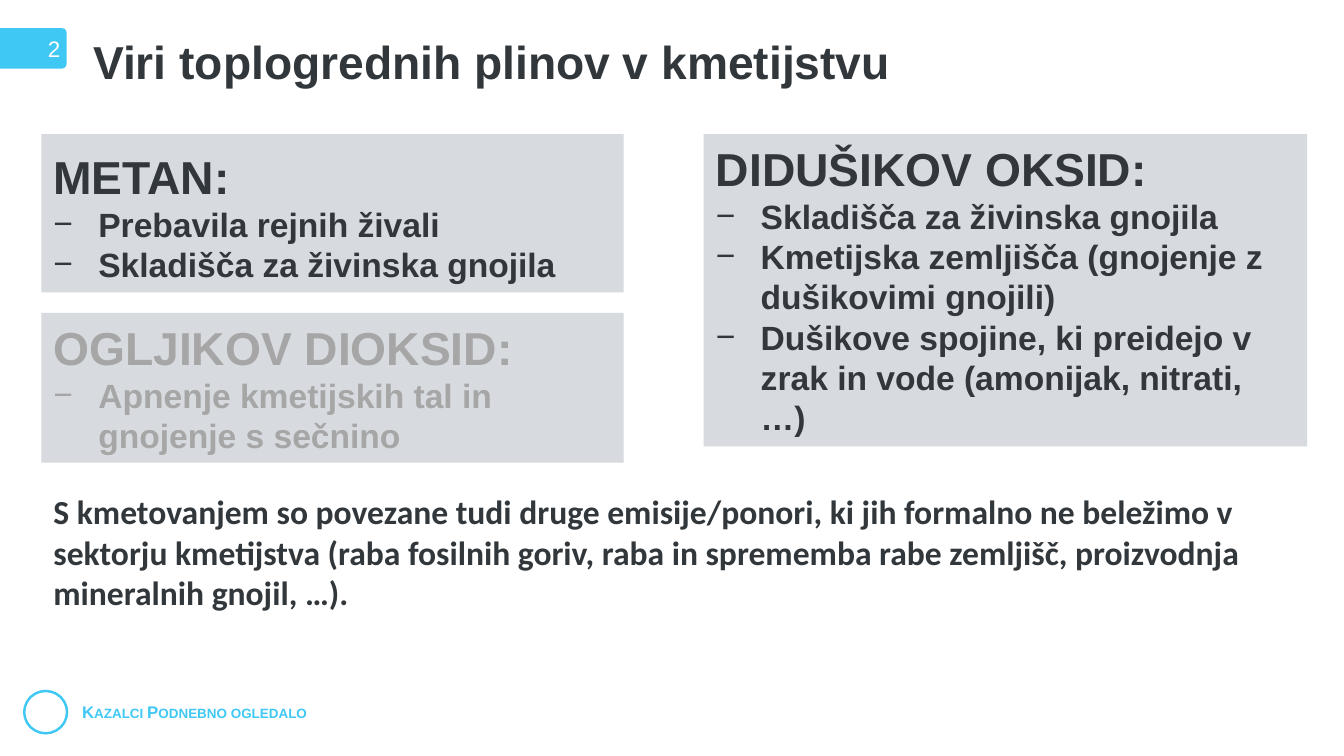
from pptx import Presentation
from pptx.dml.color import RGBColor
from pptx.enum.shapes import MSO_SHAPE as SHAPE
from pptx.enum.text import MSO_ANCHOR as ANCHOR, PP_ALIGN as ALIGN
from pptx.oxml.ns import qn
from pptx.util import Pt
from lxml.etree import SubElement

PX = 9144  # 100 px to the inch
DARK, GREY, BLUE, PALE = "31373B", "A6A6A6", "40C8F4", "D7DADF"
LEFT, TOP = 82, 266
INDENT = 89


def color(code):
    return RGBColor.from_string(code)


def place(*box):
    return [n * PX for n in box]


def bullet(para):
    props = para._p.get_or_add_pPr()
    props.set("marL", str(INDENT * PX))
    props.set("indent", str(-INDENT * PX))
    SubElement(props, qn("a:buFont")).set("typeface", "Arial")
    SubElement(props, qn("a:buChar")).set("char", "−")


def write(para, text, size=48, tone=DARK, font="Arial", bold=True,
          align=ALIGN.LEFT, caps=False):
    para.alignment = align
    run = para.add_run()
    run.text = text
    run.font.size, run.font.name, run.font.bold = Pt(size), font, bold
    run.font.color.rgb = color(tone)
    if caps:
        run.font._element.set("cap", "small")


def frame(shape, pad=(10, 5), anchor=ANCHOR.TOP):
    body = shape.text_frame
    body.word_wrap = True
    body.vertical_anchor = anchor
    body.margin_left = body.margin_right = pad[0] * PX
    body.margin_top = body.margin_bottom = pad[1] * PX
    return body


def label(slide, box, text, pad=(10, 5), **style):
    body = frame(slide.shapes.add_textbox(*place(*box)), pad)
    write(body.paragraphs[0], text, **style)
    return body


def block(slide, kind, box, fill=None, line=None):
    shape = slide.shapes.add_shape(kind, *place(*box))
    shape.shadow.inherit = False
    if fill:
        shape.fill.solid()
        shape.fill.fore_color.rgb = color(fill)
    else:
        shape.fill.background()
    if line:
        shape.line.color.rgb = color(line)
        shape.line.width = Pt(3.5)
    else:
        shape.line.fill.background()
    return shape


def card(slide, box, head, items, tone=DARK, drop=0):
    """Panel with a heading and dashed items; drop lowers the text."""
    body = frame(block(slide, SHAPE.RECTANGLE, box, PALE), (24, 12))
    body.margin_top = (12 + drop) * PX
    write(body.paragraphs[0], head, size=66, tone=tone)
    for item in items:
        para = body.add_paragraph()
        bullet(para)
        write(para, item, tone=tone)


def main():
    deck = Presentation()
    deck.slide_width, deck.slide_height = place(2666, 1500)
    slide = deck.slides.add_slide(deck.slide_layouts[6])

    label(slide, (153, 1388, 574, 50), "Kazalci Podnebno ogledalo",
          size=24, tone=BLUE, caps=True)
    block(slide, SHAPE.OVAL, (48, 1371, 85, 84), line=BLUE)

    title = label(slide, (175, 73, 2299, 195),
                  "Viri toplogrednih plinov v kmetijstvu", size=66)
    title.paragraphs[0].line_spacing = 0.9

    tab = block(slide, SHAPE.ROUNDED_RECTANGLE, (-51, 56, 183, 80), BLUE)
    tab.adjustments[0] = 0.11
    write(frame(tab, anchor=ANCHOR.MIDDLE).paragraphs[0], "2", size=32,
          tone="FFFFFF", bold=False, align=ALIGN.RIGHT)

    store = "Skladišča za živinska gnojila"
    card(slide, (LEFT, TOP, 1155, 314), "METAN:",
         ["Prebavila rejnih živali", store], drop=16)
    card(slide, (LEFT, 621, 1155, 297), "OGLJIKOV DIOKSID:",
         ["Apnenje kmetijskih tal in gnojenje s sečnino"], tone=GREY)
    card(slide, (1396, TOP, 1197, 620), "DIDUŠIKOV OKSID:",
         [store, "Kmetijska zemljišča (gnojenje z dušikovimi gnojili)",
          "Dušikove spojine, ki preidejo v zrak in vode "
          "(amonijak, nitrati, …)"])

    label(slide, (LEFT, 963, 2510, 266),
          "S kmetovanjem so povezane tudi druge emisije/ponori, ki jih "
          "formalno ne beležimo v sektorju kmetijstva (raba fosilnih goriv, "
          "raba in sprememba rabe zemljišč, proizvodnja mineralnih gnojil, "
          "…).", pad=(24, 12), font="Calibri")
    deck.save("out.pptx")


if __name__ == "__main__":
    main()
